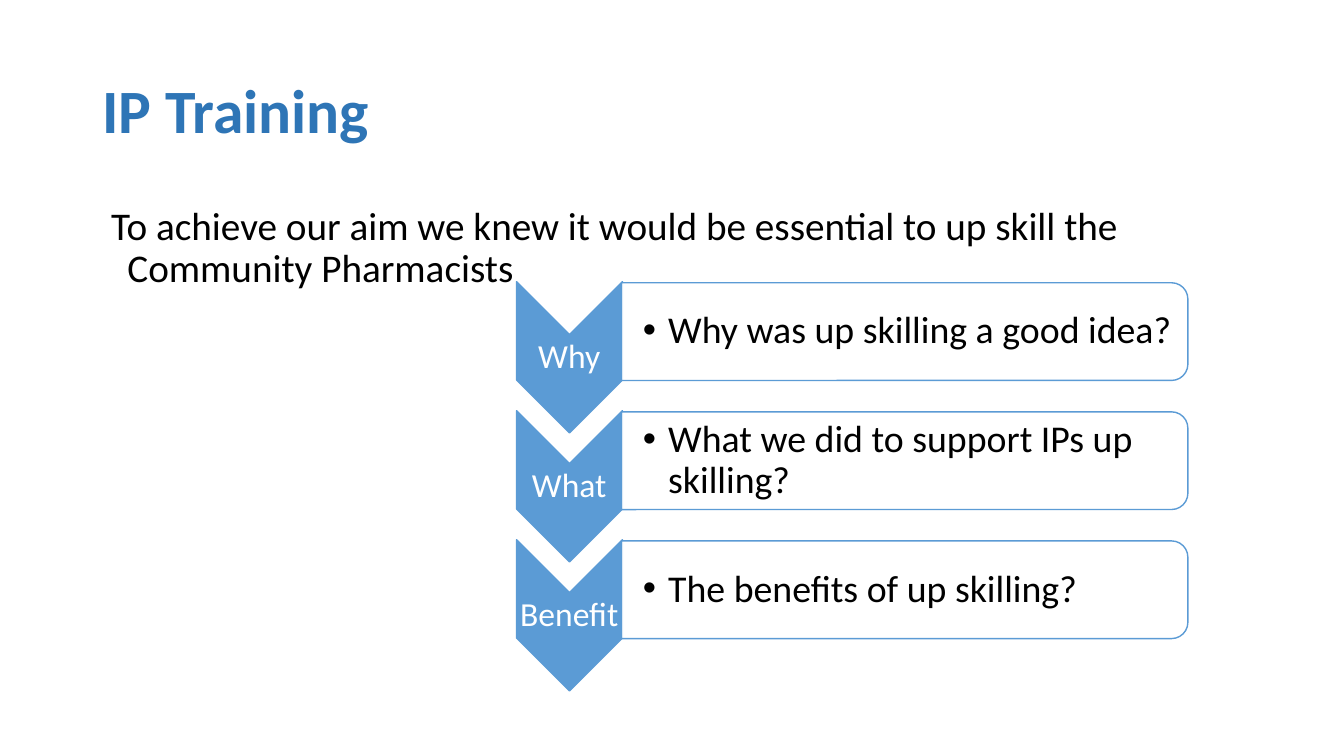
from lxml.etree import SubElement
from pptx import Presentation
from pptx.dml.color import RGBColor
from pptx.enum.shapes import MSO_SHAPE as Preset
from pptx.enum.text import MSO_ANCHOR as Anchor, PP_ALIGN as Align
from pptx.oxml.ns import qn
from pptx.util import Pt

BLUE, TITLE_BLUE, WHITE, BLACK = "5B9BD5", "2E75B6", "FFFFFF", "000000"


def color(value):
    return RGBColor.from_string(value)


class Page:
    font = "Calibri"
    line_spacing = 0.9

    def __init__(self, deck):
        self.shapes = deck.slides.add_slide(deck.slide_layouts[6]).shapes

    def text(self, place, words, size, ink, bold=False, align=Align.LEFT,
             anchor=Anchor.MIDDLE, insets=(7.2, 3.6, 7.2, 3.6),
             hanging=None, bullet=None):
        """Add a text box; hanging is (left margin, first-line indent)."""
        box = self.shapes.add_textbox(*map(Pt, place))
        frame = box.text_frame
        frame.word_wrap = True
        frame.vertical_anchor = anchor
        (frame.margin_left, frame.margin_top,
         frame.margin_right, frame.margin_bottom) = map(Pt, insets)
        para = frame.paragraphs[0]
        para.alignment = align
        para.line_spacing = self.line_spacing
        properties = para._p.get_or_add_pPr()
        if hanging:
            margin, indent = hanging
            properties.set("marL", str(Pt(margin)))
            properties.set("indent", str(Pt(indent)))
        if bullet:
            SubElement(properties, qn("a:buFont"), typeface="Arial")
            SubElement(properties, qn("a:buChar"), char=bullet)
        span = para.add_run()
        span.text = words
        span.font.name = self.font
        span.font.size = Pt(size)
        span.font.bold = bold
        span.font.color.rgb = color(ink)

    def turned_shape(self, preset, place, fill, opacity=100):
        """Add a blue-lined shape turned a quarter clockwise."""
        shape = self.shapes.add_shape(preset, *map(Pt, place))
        shape.rotation = 90
        shape.shadow.inherit = False
        shape.fill.solid()
        shape.fill.fore_color.rgb = color(fill)
        if opacity < 100:
            tint = shape._element.spPr.find(qn("a:solidFill"))[0]
            SubElement(tint, qn("a:alpha"), val=str(opacity * 1000))
        shape.line.color.rgb = color(BLUE)
        shape.line.width = Pt(1)

    def step(self, top, label, question):
        """Add a chevron with its label and the question beside it."""
        self.turned_shape(Preset.CHEVRON, (352.8, top, 108, 75.6), BLUE)
        self.text((368.8, top + 21.6, 75.6, 32.4), label, 24, WHITE,
                  align=Align.CENTER, insets=(1.4,) * 4)
        self.turned_shape(Preset.ROUND_2_SAME_RECTANGLE,
                          (611.3, top - 182.8, 69.8, 404.6), WHITE, opacity=90)
        self.text((444.2, top - 12.2, 401, 63.4), question, 27, BLACK,
                  insets=(15.1, 1.4, 1.4, 1.4), hanging=(18, -18), bullet="•")


def main():
    deck = Presentation()
    deck.slide_width, deck.slide_height = Pt(960), Pt(540)
    page = Page(deck)
    page.text((66, 28.8, 828, 104.4), "IP Training", 44, TITLE_BLUE, bold=True)
    page.text((66, 144, 828, 342.7),
              "To achieve our aim we knew it would be essential to up skill "
              "the Community Pharmacists",
              28, BLACK, anchor=Anchor.TOP, hanging=(18, -11.7))
    steps = [
        ("Why", "Why was up skilling a good idea?"),
        ("What", "What we did to support IPs up skilling?"),
        ("Benefit", "The benefits of up skilling?"),
    ]
    for row, (label, question) in enumerate(steps):
        page.step(217.4 + row * 92.2, label, question)
    deck.save("out.pptx")


if __name__ == "__main__":
    main()
